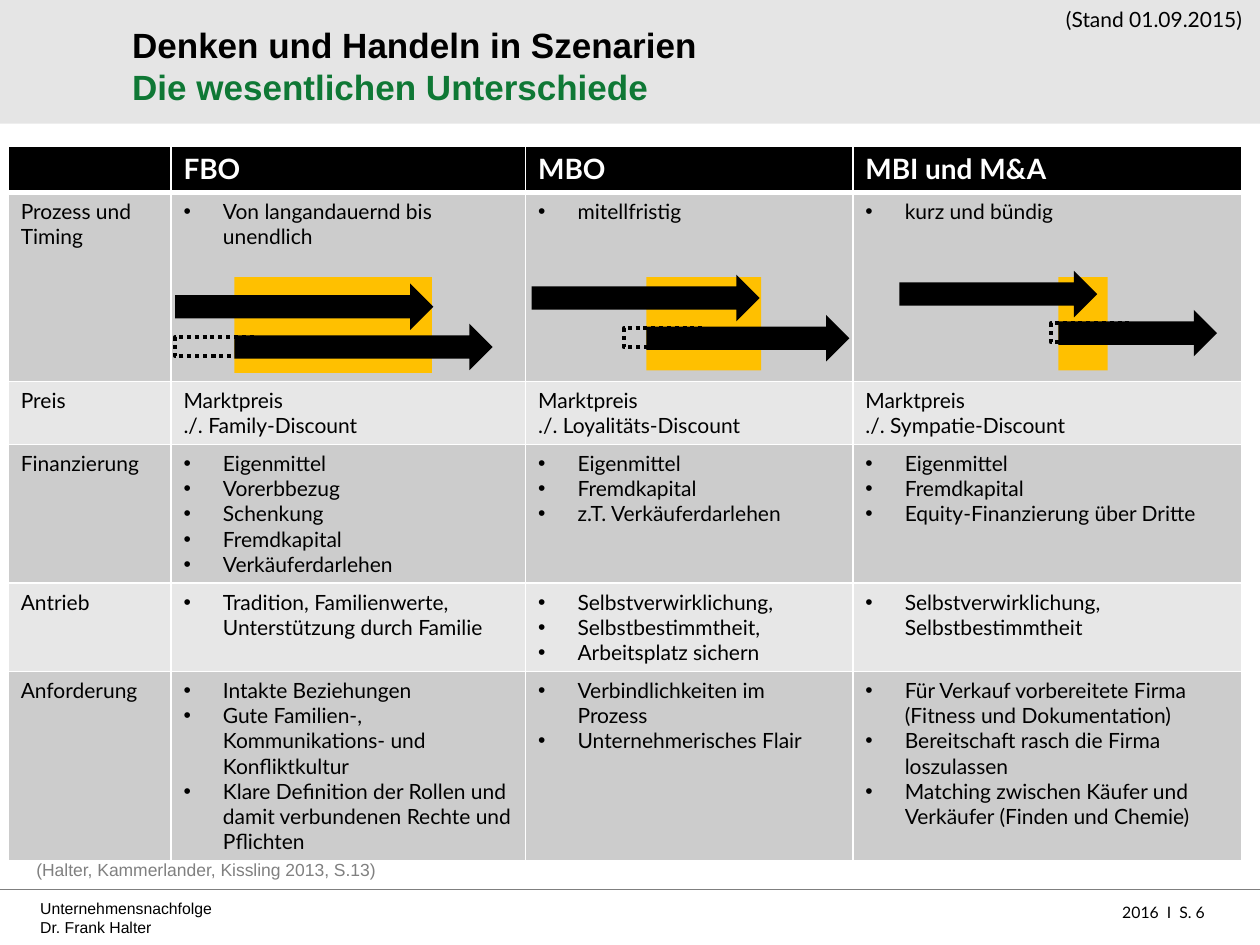
"""Build the slide comparing the succession scenarios FBO, MBO and MBI."""
import pptx
import pptx.dml.color
import pptx.enum.dml
import pptx.enum.shapes
import pptx.enum.text
import pptx.oxml
import pptx.oxml.ns
import pptx.util
from lxml import etree

Pt = pptx.util.Pt
PRESET = pptx.enum.shapes.MSO_SHAPE
ALIGN = pptx.enum.text.PP_ALIGN
ANCHOR = pptx.enum.text.MSO_ANCHOR

COLORS = {
    "black": "000000", "white": "FFFFFF", "green": "0F7835", "grey": "808080",
    "rule": "7F7F7F", "banner": "E5E5E5", "dark_band": "CCCCCC",
    "light_band": "E7E7E7", "overlap": "FFC000",
}
COLUMN_WIDTHS = [93, 202.7, 187, 222]
ROW_HEIGHTS = [26.4, 108, 36, 79.2, 50.4, 108]
HEADINGS = ["", "FBO", "MBO", "MBI und M&A"]
CRITERIA = [
    ["Prozess und Timing", ["Von langandauernd bis unendlich"],
     ["mitellfristig"], ["kurz und bündig"]],
    ["Preis", "Marktpreis\n./. Family-Discount",
     "Marktpreis\n./. Loyalitäts-Discount", "Marktpreis\n./. Sympatie-Discount"],
    ["Finanzierung",
     ["Eigenmittel", "Vorerbbezug", "Schenkung", "Fremdkapital", "Verkäuferdarlehen"],
     ["Eigenmittel", "Fremdkapital", "z.T. Verkäuferdarlehen"],
     ["Eigenmittel", "Fremdkapital", "Equity-Finanzierung über Dritte"]],
    ["Antrieb", ["Tradition, Familienwerte, Unterstützung durch Familie"],
     ["Selbstverwirklichung,", "Selbstbestimmtheit,", "Arbeitsplatz sichern"],
     ["Selbstverwirklichung, Selbstbestimmtheit"]],
    ["Anforderung",
     ["Intakte Beziehungen", "Gute Familien-, Kommunikations- und Konfliktkultur",
      "Klare Definition der Rollen und damit verbundenen Rechte und Pflichten"],
     ["Verbindlichkeiten im Prozess", "Unternehmerisches Flair"],
     ["Für Verkauf vorbereitete Firma (Fitness und Dokumentation)",
      "Bereitschaft rasch die Firma loszulassen",
      "Matching zwischen Käufer und Verkäufer (Finden und Chemie)"]],
]
TIMELINES = [
    {"overlap": (133.9, 158.4, 113, 54.7), "senior": (100, 162, 147.6),
     "junior": (133.9, 185, 147.6), "preparation": (100, 192.6)},
    {"overlap": (369.4, 158.4, 65.5, 53.3), "senior": (303.8, 157, 130.3),
     "junior": (369.4, 180, 116), "preparation": (356.4, 187.6)},
    {"overlap": (604.8, 158.4, 28.1, 53.3), "senior": (514, 154.8, 113),
     "junior": (604.8, 177.1, 90.7), "preparation": (600.5, 184.8)},
]


def rgb(name):
    return pptx.dml.color.RGBColor.from_string(COLORS[name])


def write(frame, text, size=12, font="Lato", color="black", bold=False,
          align=ALIGN.LEFT, spacing=None, bullet=False):
    """Add a paragraph to the frame, filling the first one if it is empty."""
    line = frame.paragraphs[0]
    if line.runs:
        line = frame.add_paragraph()
    if bullet:
        props = line._p.get_or_add_pPr()
        props.set("marL", str(Pt(22.5)))
        props.set("indent", str(-Pt(22.5)))
        for tag, key, value in (("a:buFont", "typeface", "Arial"),
                                ("a:buChar", "char", "•")):
            etree.SubElement(props, pptx.oxml.ns.qn(tag)).set(key, value)
    line.alignment = align
    if spacing:
        line.line_spacing = spacing
    run = line.add_run()
    run.text = text
    run.font.size = Pt(size)
    run.font.name = font
    run.font.bold = bold
    run.font.color.rgb = rgb(color)


def add_frame(slide, left, top, width, height, anchor=ANCHOR.TOP, inset=None, wrap=True):
    """Add a text box and return its text frame."""
    box = slide.shapes.add_textbox(Pt(left), Pt(top), Pt(width), Pt(height))
    frame = box.text_frame
    frame.word_wrap = wrap
    frame.vertical_anchor = anchor
    if inset is not None:
        frame.margin_left = frame.margin_right = Pt(inset)
        frame.margin_top = frame.margin_bottom = Pt(inset)
    return frame


def add_block(slide, preset, left, top, width, height, fill=None):
    """Add a filled shape, or a dotted outline when no fill is named."""
    block = slide.shapes.add_shape(preset, Pt(left), Pt(top), Pt(width), Pt(height))
    block.shadow.inherit = False
    if fill:
        block.fill.solid()
        block.fill.fore_color.rgb = rgb(fill)
        block.line.fill.background()
    else:
        block.fill.background()
        block.line.color.rgb = rgb("black")
        block.line.width = Pt(2.25)
        block.line.dash_style = pptx.enum.dml.MSO_LINE.ROUND_DOT


def add_rule(slide, left, right, top):
    """Add the thin line above the footer."""
    rule = slide.shapes.add_connector(
        pptx.enum.shapes.MSO_CONNECTOR.STRAIGHT, Pt(left), Pt(top), Pt(right), Pt(top))
    rule.line.color.rgb = rgb("rule")
    rule.line.width = Pt(0.25)
    etree.SubElement(rule._element.spPr, pptx.oxml.ns.qn("a:effectLst"))


def style_cell(cell, fill, top=1, bottom=1):
    """Give a cell white borders and its fill."""
    props = cell._tc.get_or_add_tcPr()
    for side, width in (("L", 1), ("R", 1), ("T", top), ("B", bottom)):
        props.append(pptx.oxml.parse_xml(
            f'<a:ln{side} {pptx.oxml.ns.nsdecls("a")} w="{Pt(width)}"><a:solidFill>'
            f'<a:srgbClr val="{COLORS["white"]}"/></a:solidFill></a:ln{side}>'))
    cell.fill.solid()
    cell.fill.fore_color.rgb = rgb(fill)


def add_comparison(slide):
    """Add the table of criteria by succession scenario."""
    table = slide.shapes.add_table(
        len(ROW_HEIGHTS), len(COLUMN_WIDTHS), Pt(4.7), Pt(83.5),
        Pt(sum(COLUMN_WIDTHS)), Pt(sum(ROW_HEIGHTS))).table
    for column, width in zip(table.columns, COLUMN_WIDTHS):
        column.width = Pt(width)
    for row, height in zip(table.rows, ROW_HEIGHTS):
        row.height = Pt(height)
    for index, heading in enumerate(HEADINGS):
        cell = table.cell(0, index)
        style_cell(cell, "black", bottom=3)
        if heading:
            write(cell.text_frame, heading, size=16, color="white", bold=True)
        else:
            cell.margin_top = cell.margin_bottom = Pt(0)
    for number, criterion in enumerate(CRITERIA, 1):
        band = "dark_band" if number % 2 else "light_band"
        for index, content in enumerate(criterion):
            cell = table.cell(number, index)
            style_cell(cell, band, top=3 if number == 1 else 1)
            listed = isinstance(content, list)
            for entry in content if listed else content.split("\n"):
                write(cell.text_frame, entry, bullet=listed)


def add_timeline(slide, overlap, senior, junior, preparation):
    """Add the handover arrows with their shared period."""
    add_block(slide, PRESET.RECTANGLE, *overlap, fill="overlap")
    for arrow in (senior, junior):
        add_block(slide, PRESET.RIGHT_ARROW, *arrow, 26.6, fill="black")
    add_block(slide, PRESET.RECTANGLE, *preparation, 45.4, 10.8)


def main():
    deck = pptx.Presentation()
    deck.slide_width, deck.slide_height = Pt(720), Pt(540)
    slide = deck.slides.add_slide(deck.slide_layouts[6])

    page = add_frame(slide, 571, 510, 124.5, 20, anchor=ANCHOR.MIDDLE)
    write(page, "2016  I  S. 6", size=9, align=ALIGN.RIGHT, spacing=1.2)
    add_rule(slide, 0, 720, 508.3)
    author = add_frame(slide, 21.6, 512, 392.4, 24.5, anchor=ANCHOR.BOTTOM, inset=1.4)
    for entry in ("Unternehmensnachfolge", "Dr. Frank Halter"):
        write(author, entry, size=9, font="Arial")

    add_block(slide, PRESET.RECTANGLE, 0, 0, 720, 70.6, fill="banner")
    title = add_frame(slide, 68.4, 9, 622, 57, anchor=ANCHOR.MIDDLE)
    write(title, "Denken und Handeln in Szenarien", size=20, font="Arial", bold=True)
    write(title, "Die wesentlichen Unterschiede", size=20, font="Arial",
          color="green", bold=True)
    citation = add_frame(slide, 13.7, 485, 653.8, 21.6, anchor=ANCHOR.BOTTOM)
    write(citation, "(Halter, Kammerlander, Kissling 2013, S.13)", size=10,
          font="Arial", color="grey")

    add_comparison(slide)
    for timeline in TIMELINES:
        add_timeline(slide, **timeline)
    status = add_frame(slide, 600.5, 0, 118, 21.6, wrap=False)
    write(status, "(Stand 01.09.2015)", align=ALIGN.CENTER)
    deck.save("out.pptx")


if __name__ == "__main__":
    main()
